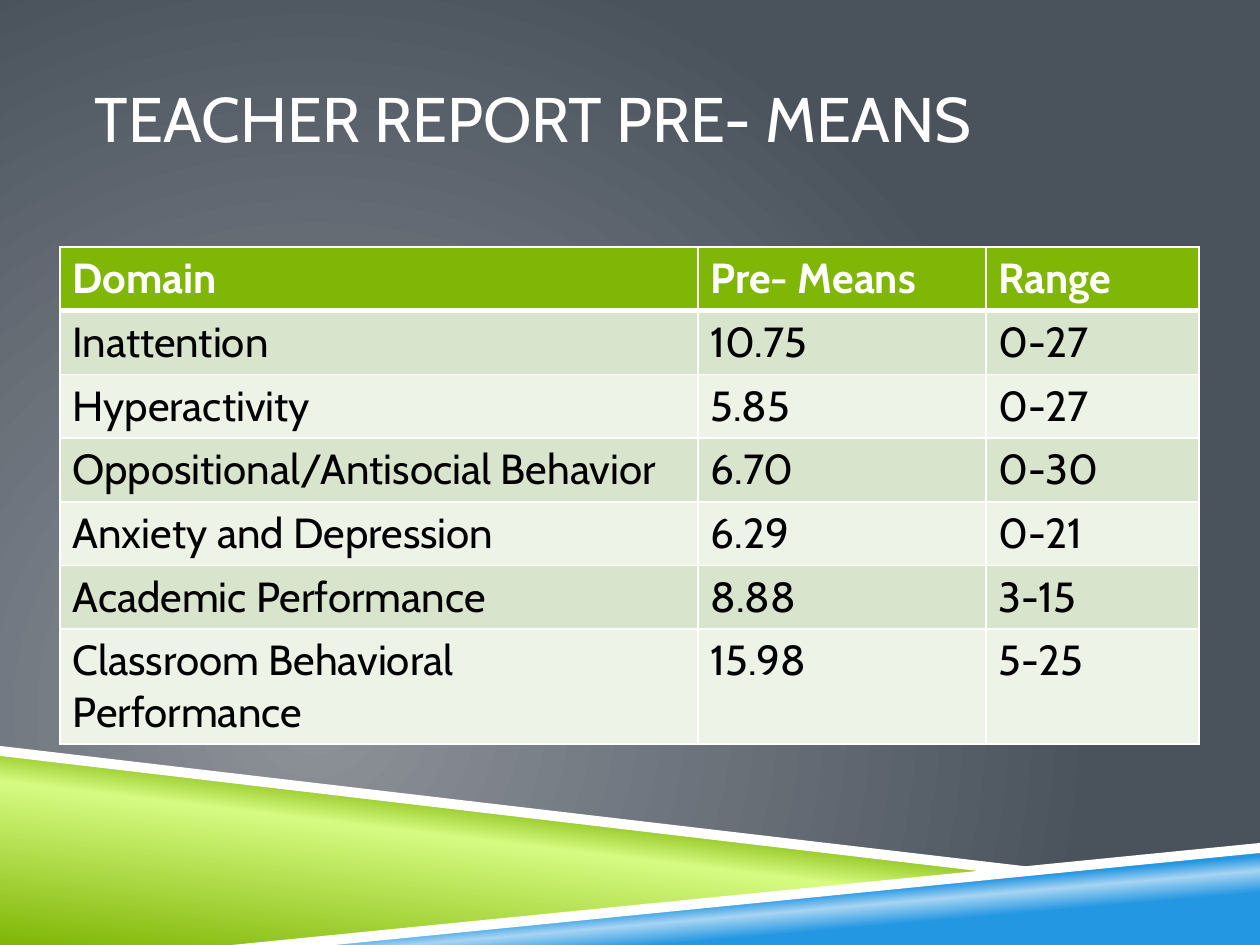
from lxml.etree import SubElement
from pptx import Presentation
from pptx.dml.color import RGBColor
from pptx.enum.text import MSO_ANCHOR as Anchor, MSO_AUTO_SIZE as AutoSize, PP_ALIGN as Align
from pptx.oxml.ns import qn
from pptx.util import Emu, Pt

# Content
TITLE = "TEACHER REPORT PRE- MEANS"
HEADER = ("Domain", "Pre- Means", "Range")
DOMAINS = [
    ("Inattention", "10.75", "0-27"),
    ("Hyperactivity", "5.85", "0-27"),
    ("Oppositional/Antisocial Behavior", "6.70", "0-30"),
    ("Anxiety and Depression", "6.29", "0-21"),
    ("Academic Performance", "8.88", "3-15"),
    ("Classroom Behavioral Performance", "15.98", "5-25"),
]

# Look
FONT = "Cabin"
COLORS = {
    "white": "FFFFFF", "black": "000000",
    "slate": "4A525C", "mist": "8E939A",
    "green": "80B606", "lime": "D6FB82",
    "blue": "2397E2", "sky": "A7D5F3",
    "band dark": "D8E5CC", "band light": "EDF3E7",
}
BACKDROP_STOPS = [(0, "mist"), (100, "slate")]
BACKDROP_FOCUS = {"l": 50, "t": 100, "r": 100, "b": 50}

# Slanted wedges and their white edges: corners in px, plain colour or stops, angle
WEDGES = [
    ([(0, 752), (998, 872), (252, 945), (0, 945)],
     [(0, "green"), (52, "lime"), (66, "green")], 277),
    ([(249, 945), (1260, 847), (1260, 945)],
     [(28, "blue"), (40, "sky"), (48, "blue")], 265),
    ([(0, 746), (0, 756), (995, 873), (1048, 869)], "white", None),
    ([(1260, 843), (232, 945), (335, 945), (1260, 853)], "white", None),
]

# Layout in px
SLIDE_W, SLIDE_H = 1260, 945
TITLE_BOX = (95, 38, 1071, 158)
TABLE_LEFT, TABLE_TOP = 60, 247
COLUMN_WIDTHS = (638, 288, 213)
ROW_H = 52
SCALE = 914400 / 126


def px(length):
    return Emu(round(length * SCALE))


def rgb(name):
    return RGBColor.from_string(COLORS[name])


def write_text(frame, text, *, size, color, bold=False):
    paragraph = frame.paragraphs[0]
    paragraph.text = text
    paragraph.alignment = Align.LEFT
    font = paragraph.runs[0].font
    font.name, font.size, font.bold = FONT, Pt(size), bold
    font.color.rgb = rgb(color)


def apply_gradient(properties, stops, angle=None, focus=None):
    """Swap the solid fill in the properties for a linear or circular gradient."""
    solid = properties.find(qn("a:solidFill"))
    gradient = SubElement(properties, qn("a:gradFill"), rotWithShape="1")
    properties.replace(solid, gradient)
    stop_list = SubElement(gradient, qn("a:gsLst"))
    for position, color in stops:
        stop = SubElement(stop_list, qn("a:gs"), pos=str(position * 1000))
        SubElement(stop, qn("a:srgbClr"), val=COLORS[color])
    if focus:
        circle = SubElement(gradient, qn("a:path"), path="circle")
        SubElement(circle, qn("a:fillToRect"),
                   {side: str(share * 1000) for side, share in focus.items()})
    else:
        SubElement(gradient, qn("a:lin"), ang=str(angle * 60000), scaled="0")


def add_wedge(slide, corners, fill, angle):
    builder = slide.shapes.build_freeform(*corners[0], scale=SCALE)
    builder.add_line_segments(corners[1:], close=True)
    wedge = builder.convert_to_shape()
    wedge.shadow.inherit = False
    wedge.line.fill.background()
    wedge.fill.solid()
    if angle is None:
        wedge.fill.fore_color.rgb = rgb(fill)
    else:
        apply_gradient(wedge._element.spPr, fill, angle=angle)


def format_cell(cell, fill, top, bottom):
    properties = cell._tc.get_or_add_tcPr()
    for side, width in (("L", 1), ("R", 1), ("T", top), ("B", bottom)):
        border = SubElement(properties, qn(f"a:ln{side}"), w=str(Pt(width)))
        color = SubElement(border, qn("a:solidFill"))
        SubElement(color, qn("a:srgbClr"), val=COLORS["white"])
    cell.fill.solid()
    cell.fill.fore_color.rgb = rgb(fill)


def add_means_table(slide):
    rows = [HEADER, *DOMAINS]
    table = slide.shapes.add_table(
        len(rows), len(HEADER), px(TABLE_LEFT), px(TABLE_TOP),
        px(sum(COLUMN_WIDTHS)), px(ROW_H * len(rows))).table
    for column, width in zip(table.columns, COLUMN_WIDTHS):
        column.width = px(width)
    for r, row in enumerate(rows):
        is_header = r == 0
        fill = "green" if is_header else "band dark" if r % 2 else "band light"
        for c, text in enumerate(row):
            cell = table.cell(r, c)
            format_cell(cell, fill, top=3 if r == 1 else 1, bottom=3 if is_header else 1)
            write_text(cell.text_frame, text, size=24, bold=is_header,
                       color="white" if is_header else "black")


def main():
    deck = Presentation()
    deck.slide_width, deck.slide_height = px(SLIDE_W), px(SLIDE_H)
    slide = deck.slides.add_slide(deck.slide_layouts[5])

    # Backdrop
    slide.background.fill.solid()
    apply_gradient(slide._element.cSld.bg.bgPr, BACKDROP_STOPS, focus=BACKDROP_FOCUS)
    for wedge in WEDGES:
        add_wedge(slide, *wedge)

    # Title
    title = slide.shapes.title
    title.left, title.top, title.width, title.height = map(px, TITLE_BOX)
    frame = title.text_frame
    frame.margin_left = frame.margin_right = 0
    frame.vertical_anchor = Anchor.MIDDLE
    frame.auto_size = AutoSize.NONE
    write_text(frame, TITLE, size=36, color="white")

    # Table
    add_means_table(slide)
    deck.save("out.pptx")


if __name__ == "__main__":
    main()
